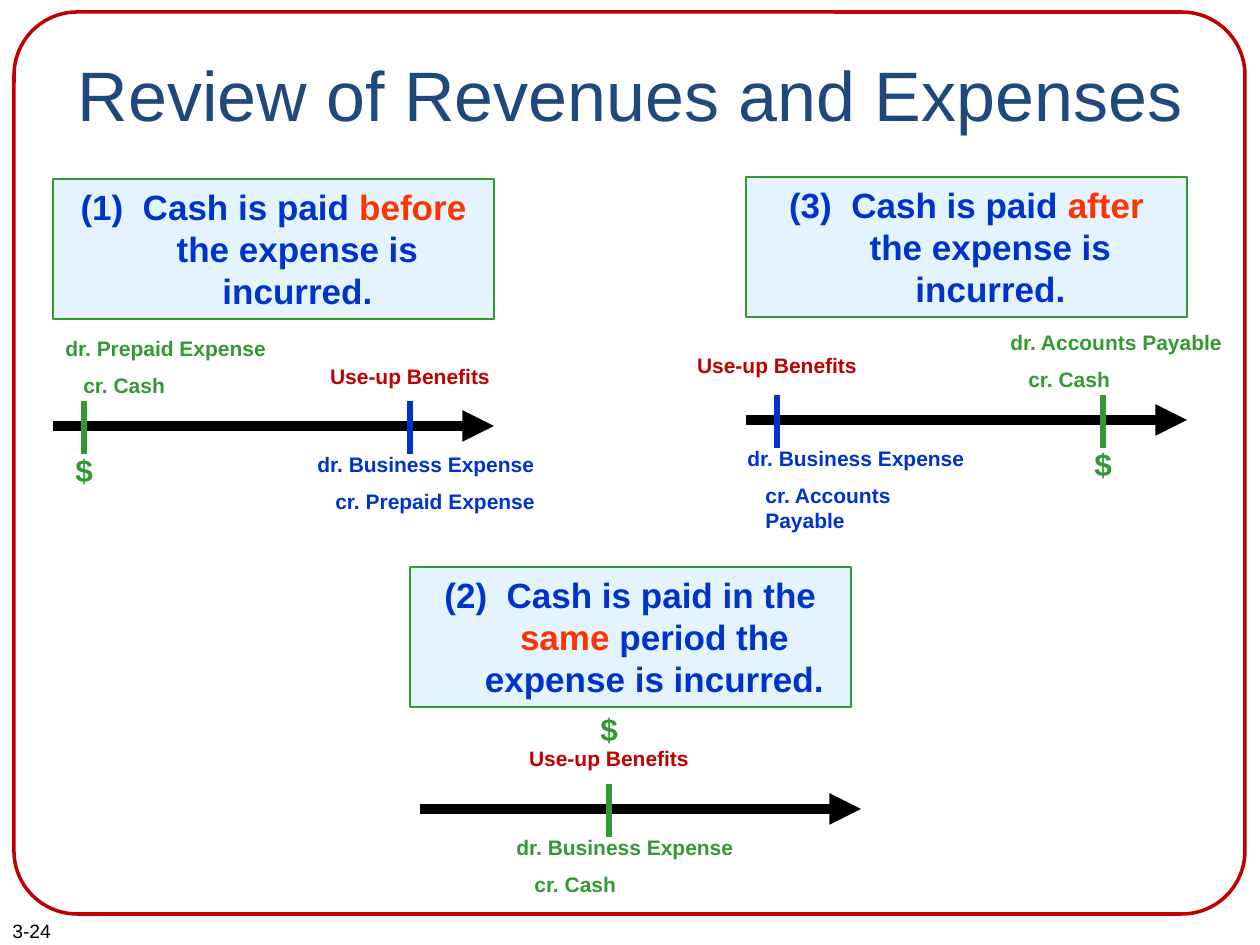
from dataclasses import dataclass

from lxml.etree import SubElement
from pptx import Presentation
from pptx.dml.color import RGBColor
from pptx.enum.shapes import MSO_CONNECTOR as Connector, MSO_SHAPE as Shape
from pptx.enum.text import MSO_ANCHOR as Anchor, PP_ALIGN as Align
from pptx.oxml.ns import qn
from pptx.util import Pt

EMU_PER_PX = 914400 / 126


@dataclass(frozen=True)
class Theme:
    font: str = "Arial"
    frame: str = "C00000"
    title: str = "1F497D"
    black: str = "000000"
    panel: str = "E3F4FF"
    green: str = "339933"
    blue: str = "0033CC"
    accent: str = "FF3300"
    title_size: int = 40
    heading_size: int = 20
    cash_size: int = 18
    entry_size: int = 12
    number_size: int = 11


THEME = Theme()


@dataclass(frozen=True)
class Timeline:
    heading: tuple
    heading_at: tuple
    arrow_at: tuple
    ticks: tuple
    entries: tuple
    cash_at: tuple
    benefits_at: tuple


TIMELINES = (
    Timeline(
        ("(1)  Cash is paid ", "before", " the expense is incurred."),
        (53, 179), (53, 426),
        ((84, THEME.green), (410, THEME.blue)),
        ((53, 329, THEME.green, "dr. Prepaid Expense", "cr. Cash"),
         (305, 445, THEME.blue, "dr. Business Expense", "cr. Prepaid Expense")),
        (84, 445), (410, 357),
    ),
    Timeline(
        ("(3)  Cash is paid ", "after", " the expense is incurred."),
        (746, 177), (746, 420),
        ((777, THEME.blue), (1103, THEME.green)),
        ((998, 323, THEME.green, "dr. Accounts Payable", "cr. Cash"),
         (735, 439, THEME.blue, "dr. Business Expense", "cr. Accounts Payable")),
        (1103, 439), (777, 346),
    ),
    Timeline(
        ("(2)  Cash is paid in the ", "same", " period the expense is incurred."),
        (410, 567), (420, 809),
        ((609, THEME.green),),
        ((504, 828, THEME.green, "dr. Business Expense", "cr. Cash"),),
        (609, 704), (609, 739),
    ),
)


def px(length):
    return round(length * EMU_PER_PX)


def add_run(paragraph, text, size, color, bold=True):
    run = paragraph.add_run()
    run.text = text
    font = run.font
    font.name, font.size, font.bold = THEME.font, Pt(size), bold
    font.color.rgb = RGBColor.from_string(color)


def set_indent(paragraph, left, first=0):
    properties = paragraph._p.get_or_add_pPr()
    properties.set("marL", str(px(left)))
    properties.set("indent", str(px(first)))


def add_text(shapes, box, lines, size, color, align=Align.LEFT, bold=True):
    frame = shapes.add_textbox(*map(px, box)).text_frame
    frame.word_wrap = True
    for index, line in enumerate(lines):
        paragraph = frame.add_paragraph() if index else frame.paragraphs[0]
        paragraph.alignment = align
        if index:
            paragraph.space_before = Pt(6.7)
            set_indent(paragraph, 18)
        add_run(paragraph, line, size, color, bold)


def add_outline(shapes, preset, box, color, width):
    shape = shapes.add_shape(preset, *map(px, box))
    shape.shadow.inherit = False
    shape.fill.background()
    shape.line.color.rgb = RGBColor.from_string(color)
    shape.line.width = Pt(width)
    return shape


def add_line(shapes, start, end, color, width, arrow=False):
    connector = shapes.add_connector(Connector.STRAIGHT, *map(px, start + end))
    connector.line.color.rgb = RGBColor.from_string(color)
    connector.line.width = Pt(width)
    if arrow:
        SubElement(connector.line._get_or_add_ln(), qn("a:tailEnd"), type="triangle")
    SubElement(connector._element.spPr, qn("a:effectLst"))


def add_heading(shapes, position, parts):
    panel = add_outline(shapes, Shape.RECTANGLE, position + (441, 140), THEME.green, 0.75)
    panel.fill.solid()
    panel.fill.fore_color.rgb = RGBColor.from_string(THEME.panel)
    frame = panel.text_frame
    frame.word_wrap = True
    frame.vertical_anchor = Anchor.TOP
    paragraph = frame.paragraphs[0]
    paragraph.alignment = Align.CENTER
    set_indent(paragraph, 48, -48)
    for text, color in zip(parts, (THEME.blue, THEME.accent, THEME.blue)):
        add_run(paragraph, text, THEME.heading_size, color)


def add_timeline(slide, timeline):
    shapes = slide.shapes.add_group_shape().shapes
    add_heading(shapes, timeline.heading_at, timeline.heading)
    left, middle = timeline.arrow_at
    add_line(shapes, (left, middle), (left + 441, middle), THEME.black, 6, arrow=True)
    for x, color in timeline.ticks:
        add_line(shapes, (x, middle - 25), (x, middle + 28), color, 3)
    for x, y, color, debit, credit in timeline.entries:
        add_text(shapes, (x, y, 250, 76), (debit, credit), THEME.entry_size, color)
    x, y = timeline.cash_at
    add_text(shapes, (x - 21, y, 42, 50), ("$",), THEME.cash_size, THEME.green)
    x, y = timeline.benefits_at
    add_text(shapes, (x - 147, y, 294, 38), ("Use-up Benefits",),
             THEME.entry_size, THEME.frame, Align.CENTER)


def add_title(slide, text):
    title = slide.shapes.title
    title.left, title.top, title.width, title.height = map(px, (63, 38, 1134, 158))
    frame = title.text_frame
    frame.vertical_anchor = Anchor.TOP
    frame.margin_top = px(14)
    paragraph = frame.paragraphs[0]
    paragraph.alignment = Align.CENTER
    add_run(paragraph, text, THEME.title_size, THEME.title, bold=False)


def main():
    presentation = Presentation()
    presentation.slide_width, presentation.slide_height = px(1260), px(945)
    slide = presentation.slides.add_slide(presentation.slide_layouts[5])
    add_text(slide.shapes, (0, 913, 179, 32), ("3-24",),
             THEME.number_size, THEME.black, bold=False)
    border = add_outline(slide.shapes, Shape.ROUNDED_RECTANGLE,
                         (14, 12, 1231, 902), THEME.frame, 2)
    border.adjustments[0] = 0.07
    add_title(slide, "Review of Revenues and Expenses")
    for timeline in TIMELINES:
        add_timeline(slide, timeline)
    presentation.save("out.pptx")


if __name__ == "__main__":
    main()
